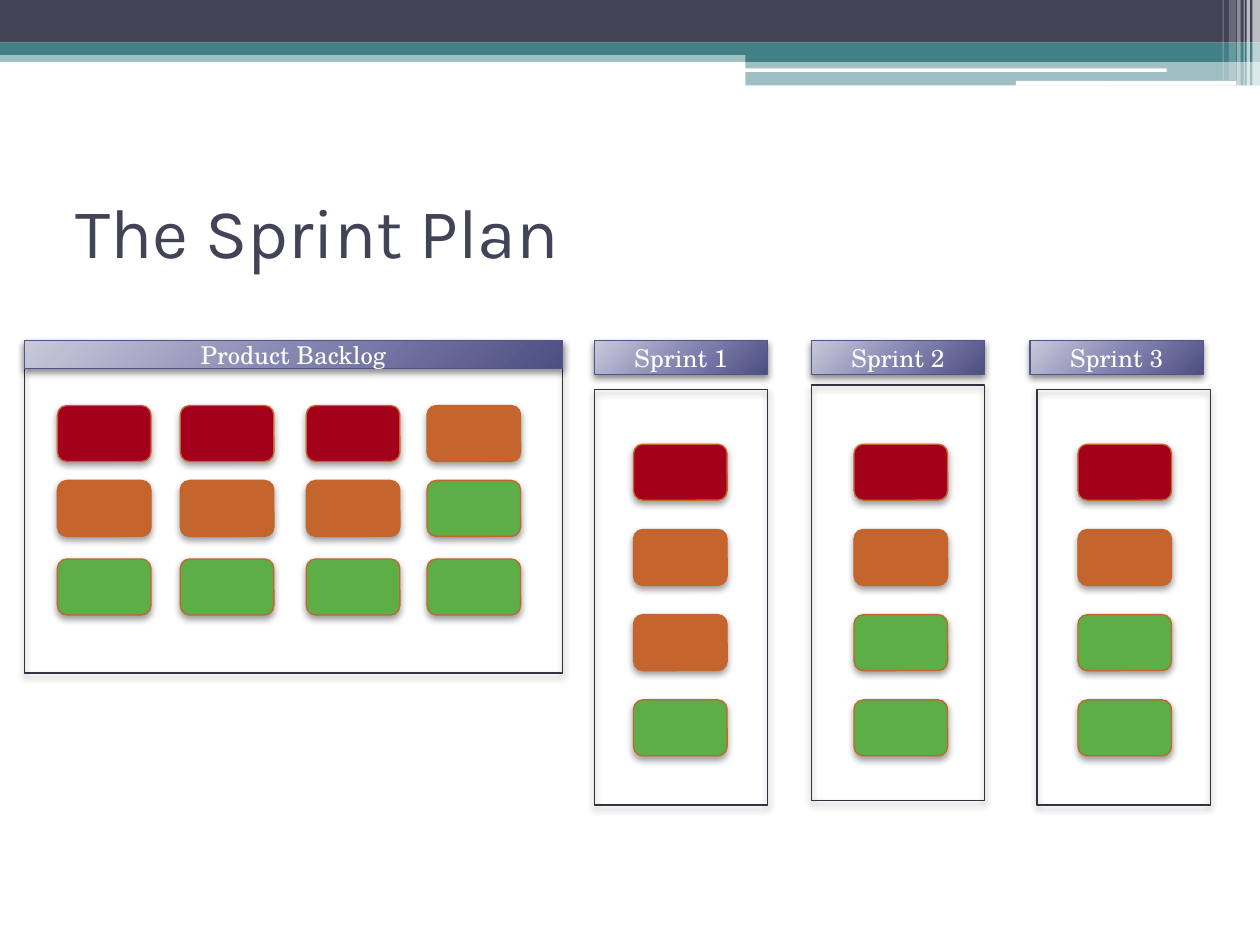
import dataclasses

import pptx
import pptx.dml.color
import pptx.enum.shapes
import pptx.enum.text
import pptx.oxml
import pptx.oxml.ns
import pptx.util

Pt = pptx.util.Pt
RECT = pptx.enum.shapes.MSO_SHAPE.RECTANGLE
ROUND = pptx.enum.shapes.MSO_SHAPE.ROUNDED_RECTANGLE
NS = pptx.oxml.ns.nsdecls("a")


@dataclasses.dataclass(frozen=True)
class Theme:
    ink: str = "424456"
    teal: str = "438086"
    white: str = "FFFFFF"
    red: str = "A3001B"
    orange: str = "C4652D"
    green: str = "5DAE47"
    frame: str = "323341"
    edge: str = "53548A"
    fade: tuple = ((0, "C9C9DA"), (55, "7F80AE"), (100, "4D4E81"))
    head: str = "Karla"
    body: str = "TeX Gyre Schola"
    big: int = 40
    small: int = 14


def color(code):
    return pptx.dml.color.RGBColor.from_string(code)


class Board:
    """Draw the parts of a sprint board on one slide."""

    def __init__(self, theme, slide):
        self.theme = theme
        self.slide = slide

    def shape(self, kind, box, fill=None, line=None):
        item = self.slide.shapes.add_shape(kind, *map(Pt, box))
        item.shadow.inherit = False
        if fill:
            item.fill.solid()
            item.fill.fore_color.rgb = color(fill)
        else:
            item.fill.background()
        if line:
            item.line.color.rgb = color(line)
            item.line.width = Pt(0.75)
        else:
            item.line.fill.background()
        return item

    def shade(self, item, alpha, blur):
        effect = item._element.spPr.find(pptx.oxml.ns.qn("a:effectLst"))
        effect.append(pptx.oxml.parse_xml(
            f'<a:outerShdw {NS} blurRad="{Pt(blur)}" dist="{Pt(2)}" dir="5400000" '
            f'rotWithShape="0"><a:srgbClr val="000000"><a:alpha val="{alpha * 1000}"/>'
            '</a:srgbClr></a:outerShdw>'))

    def band(self, box, fill, alpha=100, kind=RECT):
        item = self.shape(kind, box, fill)
        if alpha < 100:
            tint = next(item._element.spPr.iter(pptx.oxml.ns.qn("a:srgbClr")))
            tint.append(pptx.oxml.parse_xml(f'<a:alpha {NS} val="{alpha * 1000}"/>'))

    def title(self, text, box):
        item = self.slide.shapes.title
        item.left, item.top, item.width, item.height = map(Pt, box)
        self.words(item, text, self.theme.head, self.theme.big, self.theme.ink,
                   pptx.enum.text.PP_ALIGN.LEFT)

    def words(self, item, text, face, size, ink, align):
        item.text_frame.vertical_anchor = pptx.enum.text.MSO_ANCHOR.MIDDLE
        item.text_frame.text = text
        para = item.text_frame.paragraphs[0]
        para.alignment = align
        para.font.name = face
        para.font.size = Pt(size)
        para.font.color.rgb = color(ink)

    def frame(self, box):
        self.shade(self.shape(RECT, box, line=self.theme.frame), 45, 4)

    def label(self, text, box):
        item = self.shape(RECT, box, line=self.theme.edge)
        stops = "".join(f'<a:gs pos="{pos * 1000}"><a:srgbClr val="{code}"/></a:gs>'
                        for pos, code in self.theme.fade)
        props = item._element.spPr
        props.replace(props.find(pptx.oxml.ns.qn("a:noFill")), pptx.oxml.parse_xml(
            f'<a:gradFill {NS} rotWithShape="1"><a:gsLst>{stops}</a:gsLst>'
            '<a:path path="circle"><a:fillToRect l="-40000" t="-90000" r="140000" '
            'b="190000"/></a:path></a:gradFill>'))
        self.shade(item, 45, 4)
        self.words(item, text, self.theme.body, self.theme.small, self.theme.white,
                   pptx.enum.text.PP_ALIGN.CENTER)

    def card(self, left, top, fill):
        item = self.shape(ROUND, (left, top, 53.5, 32), fill, self.theme.orange)
        self.shade(item, 40, 4.1)


def main():
    deck = pptx.Presentation()
    deck.slide_width, deck.slide_height = Pt(720), Pt(540)
    theme = Theme()
    board = Board(theme, deck.slides.add_slide(deck.slide_layouts[5]))

    for box, fill, alpha in (
        ((0, 28.8, 720, 6.6), theme.teal, 50),
        ((0, 0, 720, 24.4), theme.ink, 100),
        ((0, 24.4, 720, 7), theme.teal, 100),
        ((426, 28.3, 294, 7.1), theme.teal, 100),
        ((426, 34.6, 294, 14.2), theme.teal, 50),
    ):
        board.band(box, fill, alpha)
    for box in ((425.5, 39.1, 241.2, 2), (580.5, 46.3, 126, 2.6)):
        board.band(box, theme.white, kind=ROUND)
    for left, width, tall, alpha in (
        (715.6, 4.4, 49, 65), (712.3, 2, 49, 65), (710.6, 0.7, 49, 60),
        (707, 2, 49, 40), (702.2, 4, 46, 20), (698.6, 0.7, 46, 30),
    ):
        board.band((left, 0, width, tall), theme.white, alpha)

    board.title("The Sprint Plan", (36, 90, 648, 84))

    tints = {"R": theme.red, "O": theme.orange, "G": theme.green}
    top = 194.5
    board.frame((14, top, 307.5, 190))
    board.label("Product Backlog", (14, top, 307.5, 16))
    for row, kinds in zip((231.7, 274.5, 319.4), ("RRRO", "OOOG", "GGGG")):
        for left, kind in zip((32.8, 103, 175, 244), kinds):
            board.card(left, row, tints[kind])

    lanes = (
        (339.7, 339.7, 222.6, 362, "ROOG"),
        (463.6, 463.6, 220, 488, "ROGG"),
        (588.6, 592.6, 222.6, 616, "ROGG"),
    )
    for num, (head, left, high, inner, kinds) in enumerate(lanes, 1):
        board.frame((left, high, 99, 237.5))
        board.label(f"Sprint {num}", (head, top, 99, 19.6))
        for step, kind in enumerate(kinds):
            board.card(inner, 253.8 + 48.7 * step, tints[kind])

    deck.save("out.pptx")


if __name__ == "__main__":
    main()
